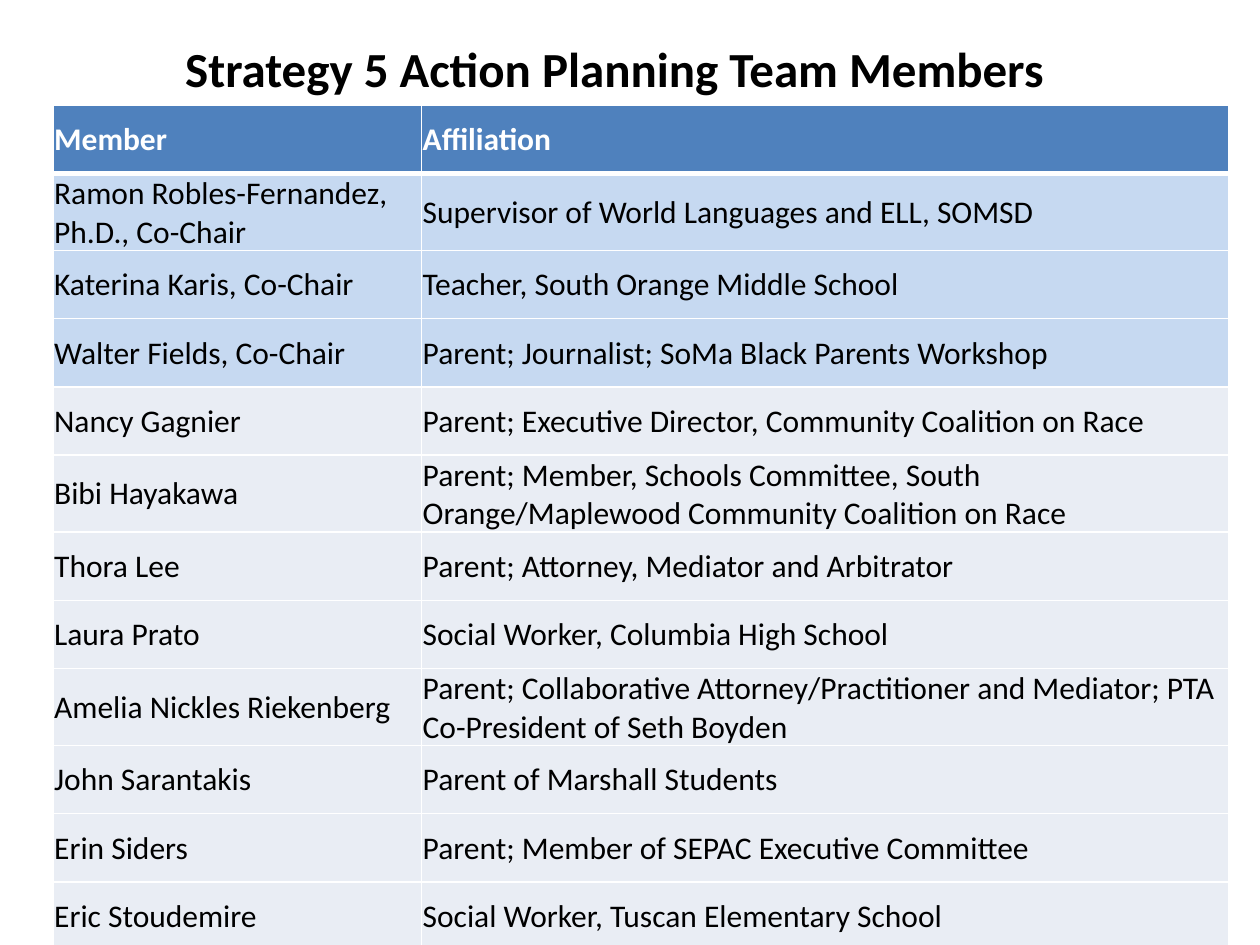
from lxml import etree
from pptx import Presentation
from pptx.dml.color import RGBColor
from pptx.enum.text import MSO_ANCHOR, MSO_AUTO_SIZE, PP_ALIGN
from pptx.oxml.ns import qn
from pptx.util import Inches, Pt

MIDDLE, BOTTOM = MSO_ANCHOR.MIDDLE, MSO_ANCHOR.BOTTOM
FIT_SHAPE = MSO_AUTO_SIZE.SHAPE_TO_FIT_TEXT
CENTER = PP_ALIGN.CENTER

COLORS = {
    "ink": "000000",
    "white": "FFFFFF",
    "header": "4F81BD",
    "chair": "C6D9F1",
    "member": "E9EDF4",
}
CHAIRS = 3
HEADINGS = ("Member", "Affiliation")
TEAM = [
    ("Ramon Robles-Fernandez, Ph.D., Co-Chair", "Supervisor of World Languages and ELL, SOMSD"),
    ("Katerina Karis, Co-Chair", "Teacher, South Orange Middle School"),
    ("Walter Fields, Co-Chair", "Parent; Journalist; SoMa Black Parents Workshop"),
    ("Nancy Gagnier", "Parent; Executive Director, Community Coalition on Race"),
    ("Bibi Hayakawa", "Parent; Member, Schools Committee, South Orange/Maplewood Community Coalition on Race"),
    ("Thora Lee", "Parent; Attorney, Mediator and Arbitrator"),
    ("Laura Prato", "Social Worker, Columbia High School"),
    ("Amelia Nickles Riekenberg", "Parent; Collaborative Attorney/Practitioner and Mediator; PTA Co-President of Seth Boyden"),
    ("John Sarantakis", "Parent of Marshall Students"),
    ("Erin Siders", "Parent; Member of SEPAC Executive Committee"),
    ("Eric Stoudemire", "Social Worker, Tuscan Elementary School"),
]


class RosterSlide:
    """Draws on one slide in a single style, on a grid of 100 columns by 75 rows."""

    font = "Calibri"
    columns, rows = 100, 75

    def __init__(self, deck):
        self.deck = deck
        self.slide = deck.slides.add_slide(deck.slide_layouts[6])

    def x(self, columns):
        return round(self.deck.slide_width * columns / self.columns)

    def y(self, rows):
        return round(self.deck.slide_height * rows / self.rows)

    def style(self, paragraph, size, color, bold):
        font = paragraph.font
        font.name, font.size, font.bold = self.font, Pt(size), bold
        font.color.rgb = RGBColor.from_string(COLORS[color])

    def title(self, text, left, top, width, height):
        heading = self.slide.shapes.add_textbox(
            self.x(left), self.y(top), self.x(width), self.y(height)
        ).text_frame
        heading.word_wrap = True
        heading.auto_size = FIT_SHAPE
        heading.text = text
        heading.paragraphs[0].alignment = CENTER
        self.style(heading.paragraphs[0], 28, "ink", True)

    def borders(self, cell, top, bottom):
        properties = cell._tc.get_or_add_tcPr()
        for side, points in (("L", 1), ("R", 1), ("T", top), ("B", bottom)):
            line = etree.SubElement(properties, qn(f"a:ln{side}"), w=str(Pt(points)))
            fill = etree.SubElement(line, qn("a:solidFill"))
            etree.SubElement(fill, qn("a:srgbClr"), val=COLORS["white"])

    def cell(self, cell, text, fill, color, bold, top, bottom, anchor):
        self.borders(cell, top, bottom)
        cell.fill.solid()
        cell.fill.fore_color.rgb = RGBColor.from_string(COLORS[fill])
        cell.margin_left = cell.margin_top = cell.margin_right = Inches(0.01)
        cell.margin_bottom = 0
        cell.vertical_anchor = anchor
        cell.text = text
        self.style(cell.text_frame.paragraphs[0], 18, color, bold)

    def roster(self, left, top, widths, row_height):
        entries = [HEADINGS, *TEAM]
        roster = self.slide.shapes.add_table(
            len(entries), len(widths), self.x(left), self.y(top),
            self.x(sum(widths)), self.y(row_height * len(entries)),
        ).table
        for column, width in zip(roster.columns, widths):
            column.width = self.x(width)
        for r, entry in enumerate(entries):
            roster.rows[r].height = self.y(row_height)
            heading = r == 0
            fill = "header" if heading else "chair" if r <= CHAIRS else "member"
            for c, text in enumerate(entry):
                self.cell(
                    roster.cell(r, c), text, fill,
                    color="white" if heading else "ink",
                    bold=heading,
                    top=3 if r == 1 else 1,
                    bottom=3 if heading else 1,
                    anchor=BOTTOM if text.startswith("Parent; Member, Schools") else MIDDLE,
                )


def main():
    deck = Presentation()
    deck.slide_width, deck.slide_height = Inches(10), Inches(7.5)
    page = RosterSlide(deck)
    page.title("Strategy 5 Action Planning Team Members", 7.5, 2.6, 82.5, 5.7)
    page.roster(4.2, 8.35, (29.25, 64.1), 5.42)
    deck.save("out.pptx")


if __name__ == "__main__":
    main()
